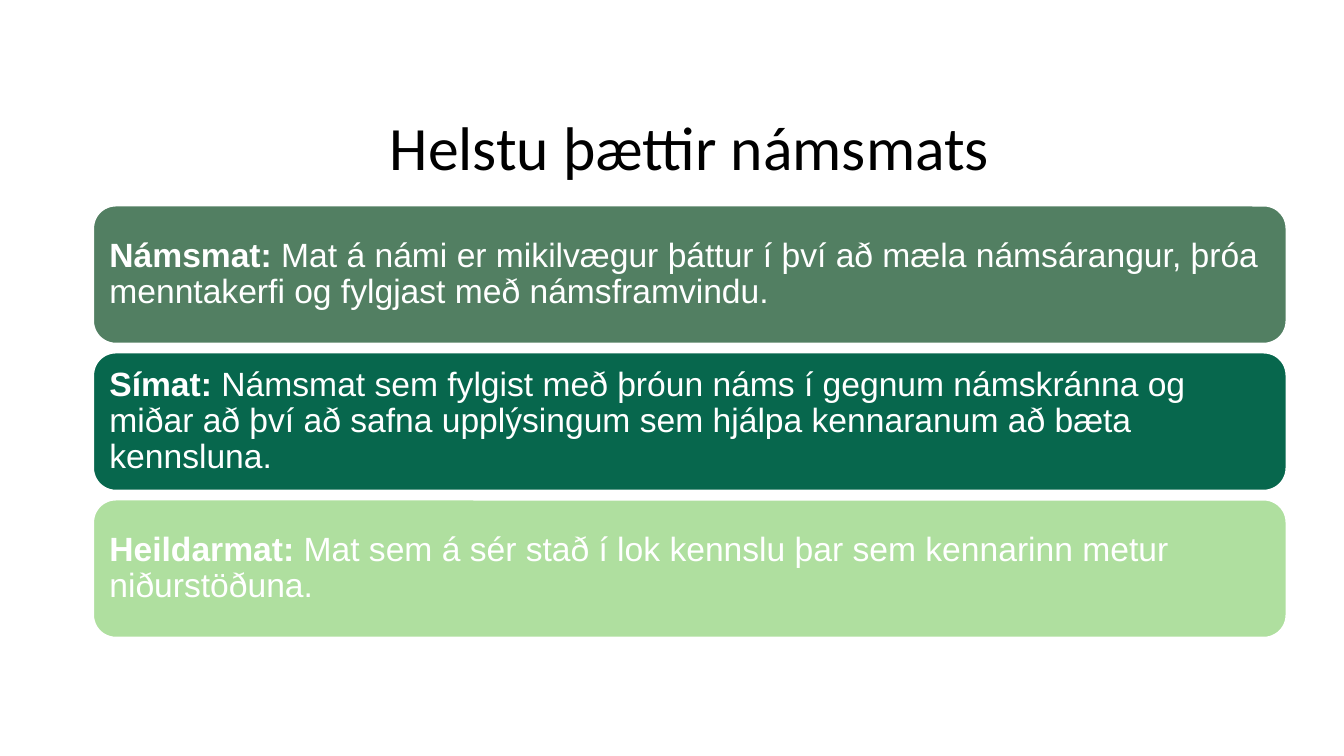
from pptx import Presentation
from pptx.dml.color import RGBColor
from pptx.enum.shapes import MSO_SHAPE
from pptx.enum.text import MSO_ANCHOR, MSO_AUTO_SIZE, PP_ALIGN
from pptx.util import Inches, Pt

ROUNDED = MSO_SHAPE.ROUNDED_RECTANGLE
MIDDLE = MSO_ANCHOR.MIDDLE
NO_FIT = MSO_AUTO_SIZE.NONE
LEFT, CENTER = PP_ALIGN.LEFT, PP_ALIGN.CENTER
TITLE_ONLY = 5

COLORS = {
    "black": "000000",
    "white": "FFFFFF",
    "sage": "527F62",
    "forest": "07674D",
    "mint": "AFDF9F",
}

CARDS = [
    ("sage", "Námsmat: ",
     "Mat á námi er mikilvægur þáttur í því að mæla námsárangur, þróa "
     "menntakerfi og fylgjast með námsframvindu."),
    ("forest", "Símat: ",
     "Námsmat sem fylgist með þróun náms í gegnum námskránna og miðar að því "
     "að safna upplýsingum sem hjálpa kennaranum að bæta kennsluna."),
    ("mint", "Heildarmat: ",
     "Mat sem á sér stað í lok kennslu þar sem kennarinn metur niðurstöðuna."),
]


class AssessmentSlide:
    title_font = "Calibri"
    body_font = "Arial"
    grid_left, grid_top = Pt(66.2), Pt(146.5)
    column_width, row_height, row_gap = Pt(852.8), Pt(99.3), Pt(5.7)

    def __init__(self, deck):
        self.page = deck.slides.add_slide(deck.slide_layouts[TITLE_ONLY])

    def color(self, name):
        return RGBColor.from_string(COLORS[name])

    def prepare(self, box, align, inset):
        frame = box.text_frame
        frame.word_wrap = True
        frame.auto_size = NO_FIT
        frame.vertical_anchor = MIDDLE
        frame.margin_left = frame.margin_right = Inches(0.1)
        frame.margin_top = frame.margin_bottom = Inches(inset)
        para = frame.paragraphs[0]
        para.alignment = align
        para.line_spacing = 0.9
        para.space_before = Pt(0)
        return para

    def span(self, para, text, font, size, color, bold=False):
        span = para.add_run()
        span.text = text
        span.font.name = font
        span.font.size = Pt(size)
        span.font.bold = bold
        span.font.color.rgb = self.color(color)

    def title(self, text):
        box = self.page.shapes.title
        box.left, box.top = Inches(1.09), Inches(0.82)
        box.width, box.height = Inches(11.5), Inches(1.35)
        para = self.prepare(box, CENTER, 0.05)
        self.span(para, text, self.title_font, 44, "black")

    def card(self, row, fill, term, meaning):
        top = self.grid_top + row * (self.row_height + self.row_gap)
        box = self.page.shapes.add_shape(
            ROUNDED, self.grid_left, top, self.column_width, self.row_height)
        box.shadow.inherit = False
        box.fill.solid()
        box.fill.fore_color.rgb = self.color(fill)
        box.line.color.rgb = self.color("white")
        box.line.width = Pt(2)
        para = self.prepare(box, LEFT, 0.1)
        self.span(para, term, self.body_font, 24, "white", bold=True)
        self.span(para, meaning, self.body_font, 24, "white")


def main():
    deck = Presentation()
    deck.slide_width, deck.slide_height = Inches(13.33), Inches(7.5)
    slide = AssessmentSlide(deck)
    slide.title("Helstu þættir námsmats")
    for row, (fill, term, meaning) in enumerate(CARDS):
        slide.card(row, fill, term, meaning)
    deck.save("out.pptx")


if __name__ == "__main__":
    main()
